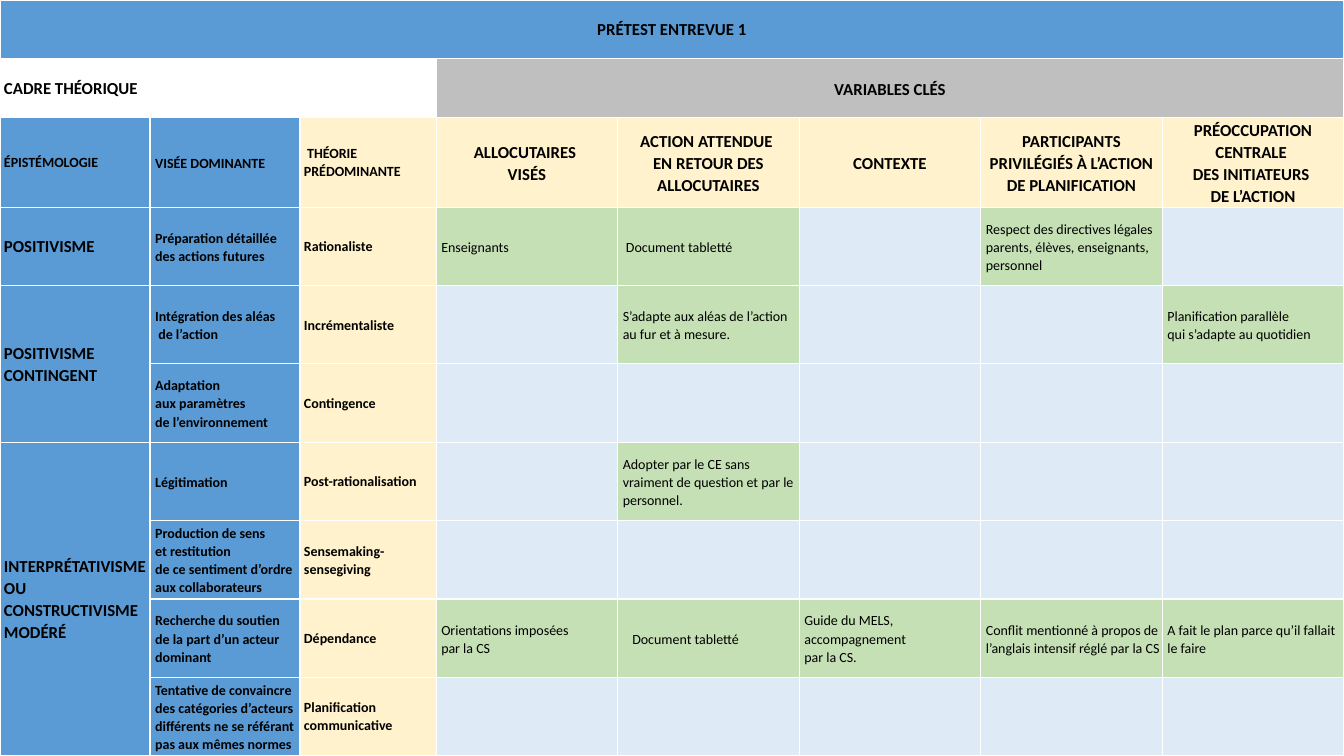
from dataclasses import dataclass, field

from lxml import etree
from pptx import Presentation
from pptx.dml.color import RGBColor
from pptx.enum.text import MSO_ANCHOR, PP_ALIGN
from pptx.oxml.ns import qn
from pptx.table import Table, _Cell
from pptx.util import Cm, Pt

BLUE = RGBColor(0x5B, 0x9B, 0xD5)
GREY = RGBColor(0xBF, 0xBF, 0xBF)
CREAM = RGBColor(0xFF, 0xF2, 0xCC)
GREEN = RGBColor(0xC5, 0xE0, 0xB4)
PALE = RGBColor(0xDE, 0xEB, 0xF7)
WHITE = RGBColor(0xFF, 0xFF, 0xFF)
BLACK = RGBColor(0x00, 0x00, 0x00)
CENTER, LEFT = PP_ALIGN.CENTER, PP_ALIGN.LEFT
MIDDLE = MSO_ANCHOR.MIDDLE

SLIDE_W, SLIDE_H = 33.87, 19.05
FRAME_COLS = [3.78, 3.78, 3.43]
HEAD_ROWS = [1.48, 1.48, 2.26]
N_VARIABLES, N_THEORIES = 5, 7
COL_WIDTHS = FRAME_COLS + [(SLIDE_W - sum(FRAME_COLS)) / N_VARIABLES] * N_VARIABLES
ROW_HEIGHTS = HEAD_ROWS + [(SLIDE_H - sum(HEAD_ROWS)) / N_THEORIES] * N_THEORIES
FIRST_VARIABLE = len(FRAME_COLS)
FIRST_THEORY = len(HEAD_ROWS)
RECIPIENTS, ACTION, CONTEXT, PARTICIPANTS, CONCERN = range(N_VARIABLES)


@dataclass(frozen=True)
class Style:
    fill: RGBColor
    size: int = 10
    bold: bool = True
    align: PP_ALIGN = LEFT
    inset: float = 0.03
    indent: float = 0.1


TITLE = Style(BLUE, 12, align=CENTER, inset=0, indent=0)
FRAME = Style(WHITE, 12, inset=0)
VARIABLES = Style(GREY, 12, align=CENTER, indent=0)
VARIABLE = Style(CREAM, 12, align=CENTER, indent=0)
EPISTEMOLOGY_HEAD = Style(BLUE, inset=0)
EPISTEMOLOGY = Style(BLUE, 12, inset=0)
AIM = Style(BLUE)
THEORY = Style(CREAM, inset=0)
FINDING = Style(GREEN, bold=False)
FINDING_INDENTED = Style(GREEN, bold=False, indent=0.18)
FINDING_DEEP = Style(GREEN, bold=False, indent=0.34)
EMPTY = Style(PALE, bold=False)


@dataclass(frozen=True)
class Finding:
    text: str
    style: Style = FINDING


@dataclass(frozen=True)
class Theory:
    aim: str
    name: str
    findings: dict[int, Finding] = field(default_factory=dict)


@dataclass(frozen=True)
class Epistemology:
    name: str
    theories: list[Theory]


VARIABLE_HEADS = [
    "ALLOCUTAIRES \nVISÉS",
    "ACTION ATTENDUE \nEN RETOUR DES ALLOCUTAIRES",
    "CONTEXTE",
    "PARTICIPANTS PRIVILÉGIÉS À L’ACTION DE PLANIFICATION",
    "PRÉOCCUPATION CENTRALE \nDES INITIATEURS \nDE L’ACTION",
]

EPISTEMOLOGIES = [
    Epistemology("POSITIVISME", [
        Theory("Préparation détaillée \ndes actions futures", "Rationaliste", {
            RECIPIENTS: Finding("Enseignants"),
            ACTION: Finding("Document tabletté", FINDING_INDENTED),
            PARTICIPANTS: Finding("Respect des directives légales parents, élèves, "
                                  "enseignants, personnel"),
        }),
    ]),
    Epistemology("POSITIVISME CONTINGENT", [
        Theory("Intégration des aléas\n de l’action", "Incrémentaliste", {
            ACTION: Finding("S’adapte aux aléas de l’action au fur et à mesure."),
            CONCERN: Finding("Planification parallèle \nqui s’adapte au quotidien"),
        }),
        Theory("Adaptation \naux paramètres \nde l’environnement", "Contingence"),
    ]),
    Epistemology("INTERPRÉTATIVISME\nOU \nCONSTRUCTIVISME MODÉRÉ", [
        Theory("Légitimation", "Post-rationalisation", {
            ACTION: Finding("Adopter par le CE sans vraiment de question et par le personnel."),
        }),
        Theory("Production de sens\net restitution \nde ce sentiment d’ordre "
               "aux collaborateurs", "Sensemaking- \nsensegiving"),
        Theory("Recherche du soutien \nde la part d’un acteur dominant", "Dépendance", {
            RECIPIENTS: Finding("Orientations imposées \npar la CS"),
            ACTION: Finding("Document tabletté", FINDING_DEEP),
            CONTEXT: Finding("Guide du MELS, accompagnement \npar la CS."),
            PARTICIPANTS: Finding("Conflit mentionné à propos de l’anglais intensif "
                                  "réglé par la CS"),
            CONCERN: Finding("A fait le plan parce qu’il fallait le faire"),
        }),
        Theory("Tentative de convaincre \ndes catégories d’acteurs différents ne se "
               "référant pas aux mêmes normes", "Planification \ncommunicative"),
    ]),
]


def add_borders(cell: _Cell) -> None:
    """Draw 1 pt white lines on all four sides; they must precede the fill."""
    tc_pr = cell._tc.get_or_add_tcPr()
    for i, side in enumerate(("a:lnL", "a:lnR", "a:lnT", "a:lnB")):
        ln = etree.Element(qn(side), w=str(Pt(1)))
        solid = etree.SubElement(ln, qn("a:solidFill"))
        etree.SubElement(solid, qn("a:srgbClr"), val=str(WHITE))
        tc_pr.insert(i, ln)


def fill_cell(cell: _Cell, text: str, style: Style) -> None:
    cell.fill.solid()
    cell.fill.fore_color.rgb = style.fill
    cell.vertical_anchor = MIDDLE
    cell.margin_left = cell.margin_right = cell.margin_top = Cm(style.inset)
    cell.margin_bottom = 0
    p = cell.text_frame.paragraphs[0]
    p.text = text
    p.alignment = style.align
    p.line_spacing = 1.07
    p.space_after = Pt(8)
    p.font.name = "Calibri"
    p.font.size = Pt(style.size)
    p.font.bold = style.bold
    p.font.color.rgb = BLACK
    p._p.get_or_add_pPr().set("marL", str(Cm(style.indent)))


def fill_head(table: Table) -> None:
    last = len(COL_WIDTHS) - 1
    table.cell(0, 0).merge(table.cell(0, last))
    fill_cell(table.cell(0, 0), "PRÉTEST ENTREVUE 1", TITLE)
    for col, text in enumerate(["CADRE THÉORIQUE", "", ""]):
        fill_cell(table.cell(1, col), text, FRAME)
    table.cell(1, FIRST_VARIABLE).merge(table.cell(1, last))
    fill_cell(table.cell(1, FIRST_VARIABLE), "VARIABLES CLÉS", VARIABLES)
    fill_cell(table.cell(2, 0), "ÉPISTÉMOLOGIE", EPISTEMOLOGY_HEAD)
    fill_cell(table.cell(2, 1), "VISÉE DOMINANTE", AIM)
    fill_cell(table.cell(2, 2), " THÉORIE\nPRÉDOMINANTE", THEORY)
    for col, text in enumerate(VARIABLE_HEADS, FIRST_VARIABLE):
        fill_cell(table.cell(2, col), text, VARIABLE)


def fill_theory(table: Table, row: int, theory: Theory) -> None:
    fill_cell(table.cell(row, 1), theory.aim, AIM)
    fill_cell(table.cell(row, 2), theory.name, THEORY)
    for variable in range(N_VARIABLES):
        finding = theory.findings.get(variable, Finding("", EMPTY))
        fill_cell(table.cell(row, FIRST_VARIABLE + variable), finding.text, finding.style)


def fill_body(table: Table) -> None:
    row = FIRST_THEORY
    for epistemology in EPISTEMOLOGIES:
        end = row + len(epistemology.theories)
        if end - row > 1:
            table.cell(row, 0).merge(table.cell(end - 1, 0))
        fill_cell(table.cell(row, 0), epistemology.name, EPISTEMOLOGY)
        for i, theory in enumerate(epistemology.theories, row):
            fill_theory(table, i, theory)
        row = end


def main() -> None:
    prs = Presentation()
    prs.slide_width, prs.slide_height = Cm(SLIDE_W), Cm(SLIDE_H)
    s = prs.slides.add_slide(prs.slide_layouts[6])
    table = s.shapes.add_table(len(ROW_HEIGHTS), len(COL_WIDTHS), 0, 0,
                               Cm(SLIDE_W), Cm(SLIDE_H)).table
    table.first_row = table.horz_banding = False
    for column, width in zip(table.columns, COL_WIDTHS):
        column.width = Cm(width)
    for row, height in zip(table.rows, ROW_HEIGHTS):
        row.height = Cm(height)
    fill_head(table)
    fill_body(table)
    for cell in table.iter_cells():
        add_borders(cell)
    prs.save("out.pptx")


if __name__ == "__main__":
    main()
